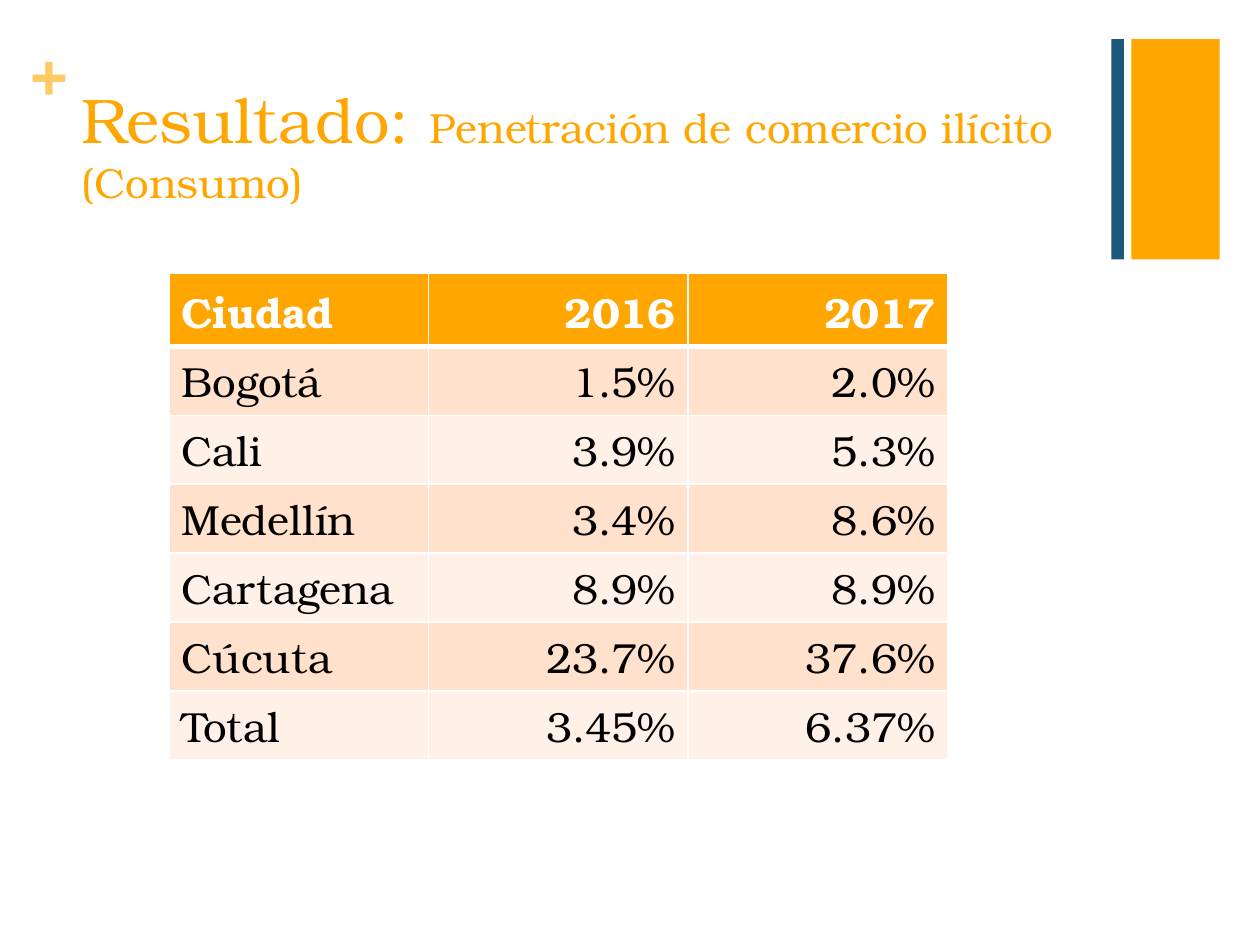
from lxml.etree import SubElement
from pptx import Presentation
from pptx.dml.color import RGBColor
from pptx.enum.shapes import MSO_SHAPE
from pptx.enum.text import MSO_ANCHOR, MSO_AUTO_SIZE, PP_ALIGN
from pptx.oxml.ns import qn
from pptx.util import Inches, Pt

FONT = "TeX Gyre Bonum"
ORANGE, LIGHT_ORANGE, BLUE = "FFA600", "FFCA66", "1B587C"
WHITE, BLACK = "FFFFFF", "000000"
BANDS = ("FFE1CC", "FFF1E7")
TABLE_HEIGHT, HEADER_HEIGHT = 3.86, 0.58
ROWS = [
    ("Ciudad", "2016", "2017"),
    ("Bogotá", "1.5%", "2.0%"),
    ("Cali", "3.9%", "5.3%"),
    ("Medellín", "3.4%", "8.6%"),
    ("Cartagena", "8.9%", "8.9%"),
    ("Cúcuta", "23.7%", "37.6%"),
    ("Total", "3.45%", "6.37%"),
]


def rgb(color):
    return RGBColor.from_string(color)


def format_run(r, size, color, bold=False):
    r.font.name = FONT
    r.font.size = Pt(size)
    r.font.bold = bold
    r.font.color.rgb = rgb(color)


def add_bar(s, left, width, color):
    sp = s.shapes.add_shape(MSO_SHAPE.RECTANGLE, Inches(left), Inches(0.31),
                            Inches(width), Inches(1.75))
    sp.shadow.inherit = False
    sp.fill.solid()
    sp.fill.fore_color.rgb = rgb(color)
    sp.line.fill.background()


def add_plus(s):
    sp = s.shapes.add_textbox(Inches(0.24), Inches(0.25), Inches(0.29), Inches(0.61))
    tf = sp.text_frame
    tf.margin_left = tf.margin_top = tf.margin_right = tf.margin_bottom = 0
    tf.word_wrap = True
    tf.text = "+"
    format_run(tf.paragraphs[0].runs[0], 36, LIGHT_ORANGE, bold=True)


def set_title(s):
    sp = s.shapes.title
    sp.left, sp.top = Inches(0.55), Inches(0.53)
    sp.width, sp.height = Inches(8.26), Inches(1.22)
    tf = sp.text_frame
    tf.auto_size = MSO_AUTO_SIZE.NONE
    tf.word_wrap = True
    tf.vertical_anchor = MSO_ANCHOR.MIDDLE
    p = tf.paragraphs[0]
    p.alignment = PP_ALIGN.LEFT
    for text, size in (("Resultado: ", 36),
                       ("Penetración de comercio ilícito (Consumo)", 24)):
        r = p.add_run()
        r.text = text
        format_run(r, size, ORANGE)


def set_borders(cell, widths):
    """Draw white borders; widths maps each side (L, R, T, B) to points."""
    props = cell._tc.get_or_add_tcPr()
    for i, (side, width) in enumerate(widths.items()):
        line = props.makeelement(qn(f"a:ln{side}"), {"w": str(Pt(width))})
        fill = SubElement(line, qn("a:solidFill"))
        SubElement(fill, qn("a:srgbClr"), val=WHITE)
        props.insert(i, line)


def add_city_table(s):
    table = s.shapes.add_table(len(ROWS), len(ROWS[0]), Inches(1.34), Inches(2.17),
                               Inches(6.18), Inches(TABLE_HEIGHT)).table
    body_height = (TABLE_HEIGHT - HEADER_HEIGHT) / (len(ROWS) - 1)
    for i, values in enumerate(ROWS):
        header = i == 0
        table.rows[i].height = Inches(HEADER_HEIGHT if header else body_height)
        for j, value in enumerate(values):
            cell = table.cell(i, j)
            cell.fill.solid()
            cell.fill.fore_color.rgb = rgb(ORANGE if header else BANDS[(i - 1) % 2])
            set_borders(cell, {"L": 1, "R": 1, "T": 3 if i == 1 else 1,
                               "B": 3 if header else 1})
            cell.text_frame.text = value
            p = cell.text_frame.paragraphs[0]
            p.alignment = PP_ALIGN.RIGHT if j else PP_ALIGN.LEFT
            format_run(p.runs[0], 24, WHITE if header else BLACK, bold=header)


def main():
    prs = Presentation()
    prs.slide_width, prs.slide_height = Inches(10), Inches(7.5)
    s = prs.slides.add_slide(prs.slide_layouts[5])
    add_bar(s, 8.98, 0.7, ORANGE)
    add_plus(s)
    add_bar(s, 8.82, 0.1, BLUE)
    set_title(s)
    add_city_table(s)
    prs.save("out.pptx")


if __name__ == "__main__":
    main()
